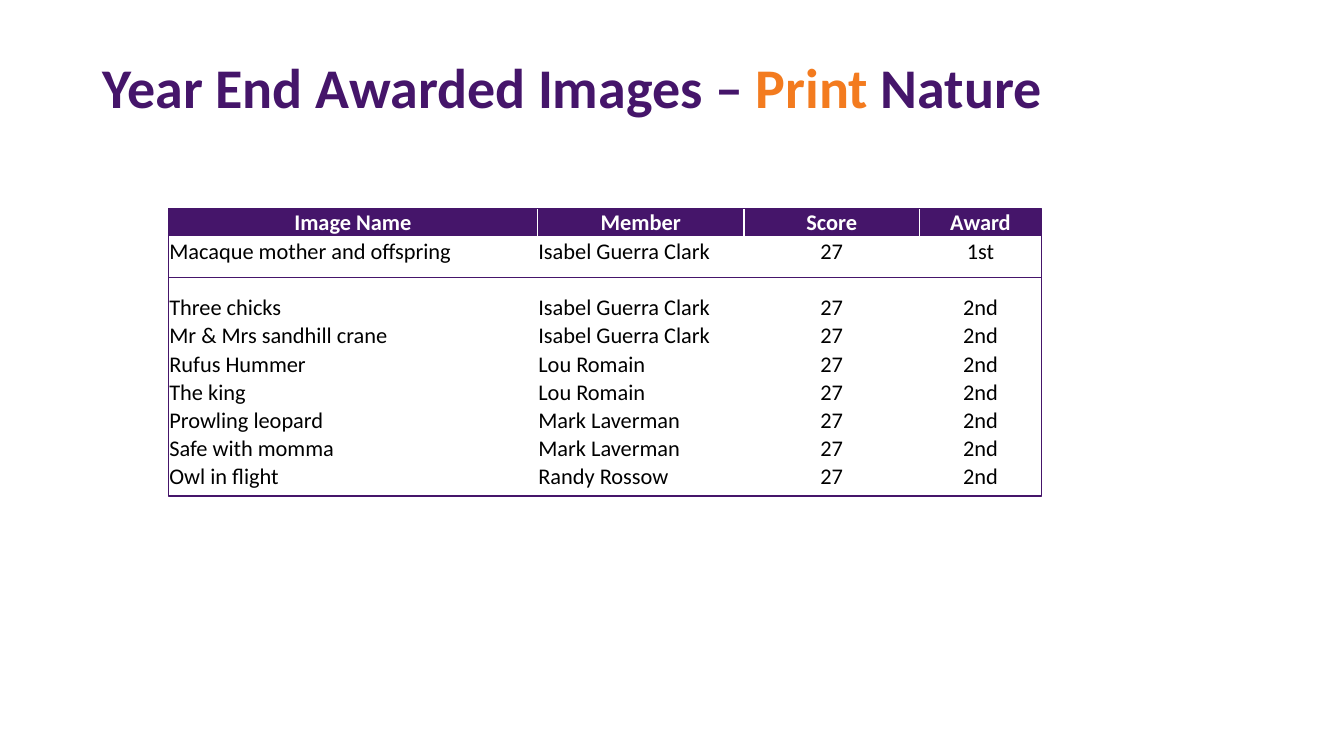
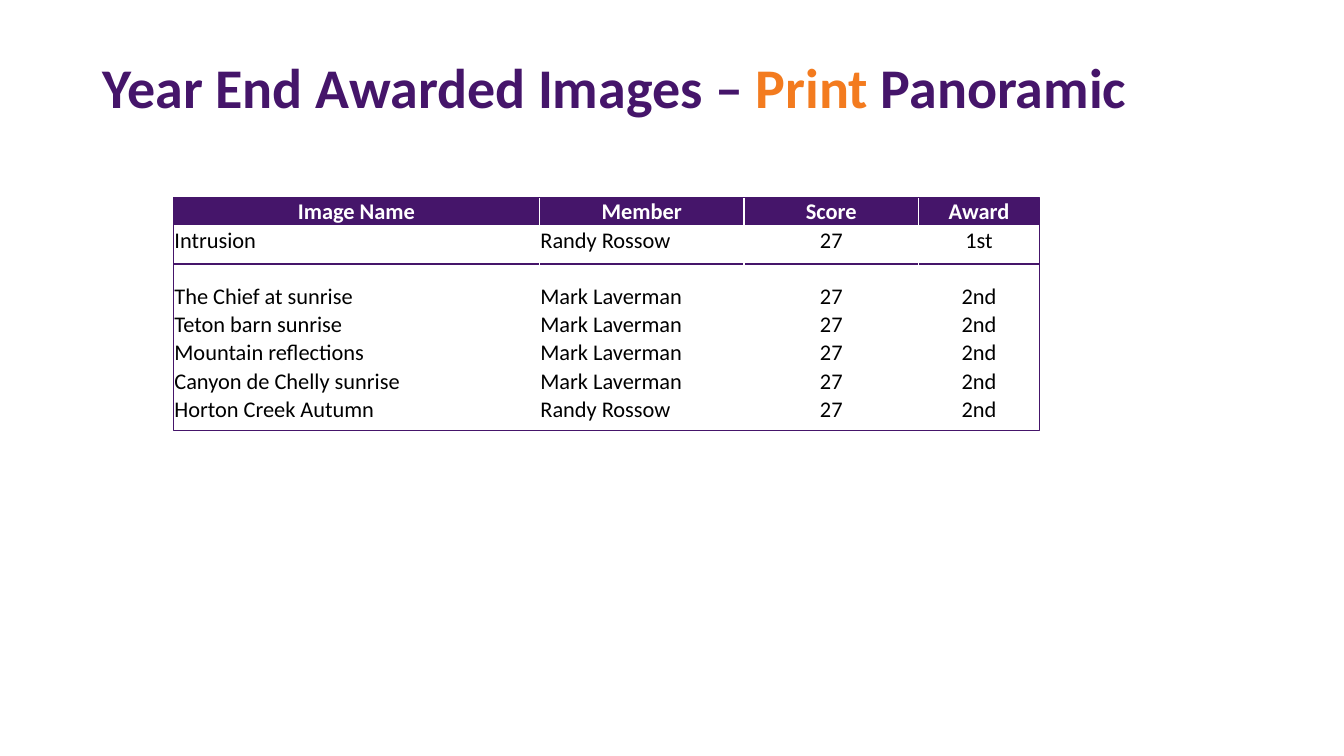
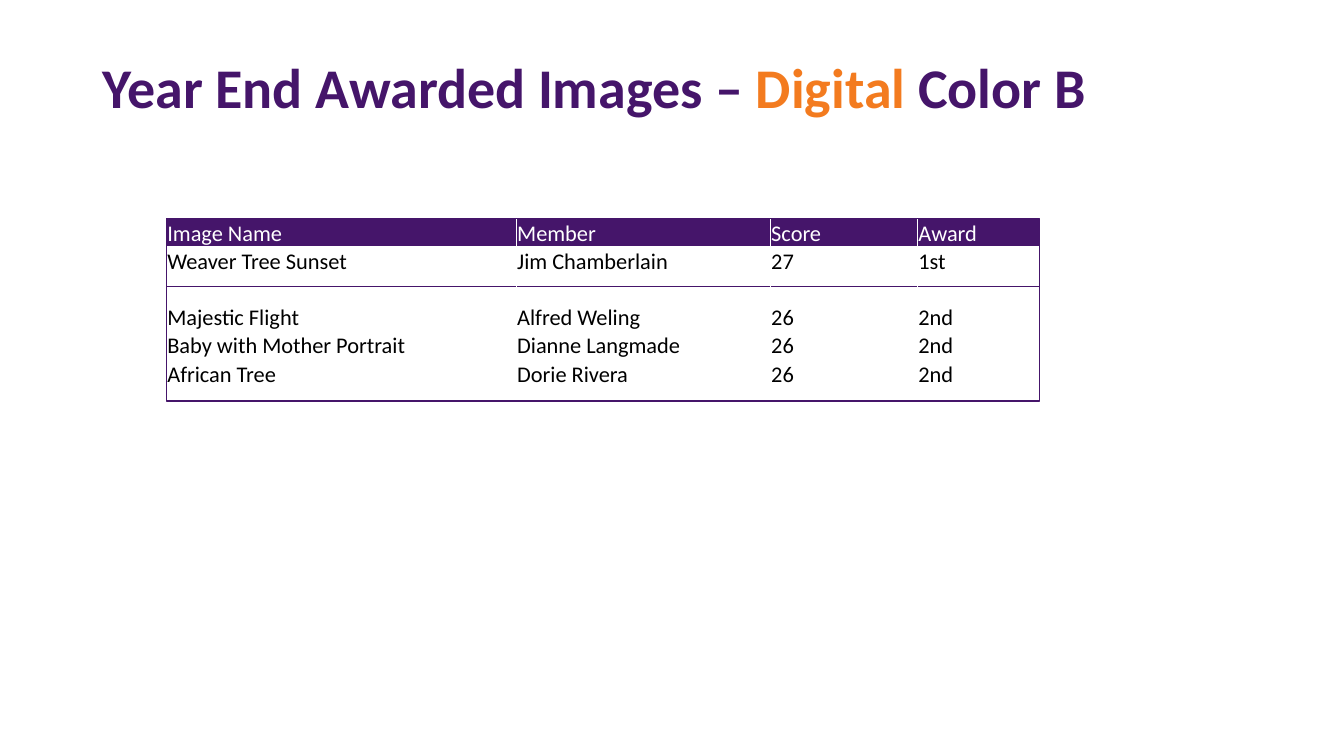
"""Build three slides that list the year-end awarded images."""
from lxml.etree import SubElement
from pptx import Presentation
from pptx.dml.color import RGBColor
from pptx.enum.shapes import MSO_CONNECTOR as Connector, MSO_SHAPE as Shape
from pptx.enum.text import MSO_ANCHOR as Anchor, PP_ALIGN as Align
from pptx.oxml.ns import qn
from pptx.util import Inches, Pt

COLORS = {"purple": "45156A", "orange": "F37B1F", "white": "FFFFFF", "black": "000000"}
HEADERS = ("Image Name", "Member", "Score", "Award")
ROW_HEIGHT = 0.28
TEXT_SIZE = 16

AWARDS = [
    {
        "medium": "Print", "category": "Nature",
        "left": 1.67, "top": 2.07, "frame_height": 2.85, "divider": 2.75,
        "columns": (3.66, 2.05, 1.74, 1.21), "centered": True, "divider_on_top": True,
        "first": ("Macaque mother and offspring", "Isabel Guerra Clark", "27", "1st"),
        "second_score": "27",
        "seconds": [
            ("Three chicks", "Isabel Guerra Clark"),
            ("Mr & Mrs sandhill crane", "Isabel Guerra Clark"),
            ("Rufus Hummer", "Lou Romain"),
            ("The king", "Lou Romain"),
            ("Prowling leopard", "Mark Laverman"),
            ("Safe with momma", "Mark Laverman"),
            ("Owl in flight", "Randy Rossow"),
        ],
    },
    {
        "medium": "Print", "category": "Panoramic",
        "left": 1.72, "top": 1.96, "frame_height": 2.31, "divider": 2.62,
        "columns": (3.63, 2.03, 1.73, 1.2), "centered": True, "divider_on_top": False,
        "first": ("Intrusion", "Randy Rossow", "27", "1st"),
        "second_score": "27",
        "seconds": [
            ("The Chief at sunrise", "Mark Laverman"),
            ("Teton barn sunrise", "Mark Laverman"),
            ("Mountain reflections", "Mark Laverman"),
            ("Canyon de Chelly sunrise", "Mark Laverman"),
            ("Horton Creek Autumn", "Randy Rossow"),
        ],
    },
    {
        "medium": "Digital", "category": "Color B",
        "left": 1.65, "top": 2.17, "frame_height": 1.81, "divider": 2.84,
        "columns": (3.47, 2.52, 1.46, 1.21), "centered": False, "divider_on_top": False,
        "first": ("Weaver Tree Sunset", "Jim Chamberlain", "27", "1st"),
        "second_score": "26",
        "seconds": [
            ("Majestic Flight", "Alfred Weling"),
            ("Baby with Mother Portrait", "Dianne Langmade"),
            ("African Tree", "Dorie Rivera"),
        ],
    },
]


def write(paragraph, text, size=TEXT_SIZE, color="black", bold=False, align=Align.LEFT):
    paragraph.alignment = align
    run = paragraph.add_run()
    run.text = text
    run.font.name = "Calibri"
    run.font.size = Pt(size)
    run.font.bold = bold
    run.font.color.rgb = RGBColor.from_string(COLORS[color])


def format_cell(cell, fill):
    cell.vertical_anchor = Anchor.BOTTOM
    cell.margin_left = cell.margin_right = cell.margin_top = Inches(0.01)
    cell.margin_bottom = 0
    properties = cell._tc.get_or_add_tcPr()
    for side in ("a:lnL", "a:lnR", "a:lnT", "a:lnB"):
        border = SubElement(properties, qn(side), w=str(Pt(1)))
        solid = SubElement(border, qn("a:solidFill"))
        SubElement(solid, qn("a:srgbClr"), val=COLORS["white"])
    if fill:
        cell.fill.solid()
        cell.fill.fore_color.rgb = RGBColor.from_string(COLORS[fill])
    else:
        cell.fill.background()


presentation = Presentation()
presentation.slide_width = Inches(13.33)
presentation.slide_height = Inches(7.5)

for award in AWARDS:
    slide = presentation.slides.add_slide(presentation.slide_layouts[6])
    left, top = Inches(award["left"]), Inches(award["top"])
    width = Inches(sum(award["columns"]))

    title = slide.shapes.add_textbox(Inches(0.92), Inches(0.4), Inches(11.5), Inches(0.99))
    title.text_frame.word_wrap = True
    title.text_frame.vertical_anchor = Anchor.MIDDLE
    heading = title.text_frame.paragraphs[0]
    heading.line_spacing = 0.9
    for text, color in (
        ("Year End Awarded Images – ", "purple"),
        (award["medium"], "orange"),
        (" " + award["category"], "purple"),
    ):
        write(heading, text, size=40, color=color, bold=True)

    divider_y = Inches(award["divider"])
    divider = slide.shapes.add_connector(
        Connector.STRAIGHT, left, divider_y, left + width, divider_y)
    divider.line.color.rgb = RGBColor.from_string(COLORS["purple"])
    divider.line.width = Pt(1)
    SubElement(divider._element.spPr, qn("a:effectLst"))

    seconds = [(*entry, award["second_score"], "2nd") for entry in award["seconds"]]
    rows = [HEADERS, award["first"], ("",) * len(HEADERS), *seconds]
    table_frame = slide.shapes.add_table(
        len(rows), len(HEADERS), left, top, width, Inches(ROW_HEIGHT * len(rows)))
    table = table_frame.table
    table.first_row = table.horz_banding = False
    for column, column_width in zip(table.columns, award["columns"]):
        column.width = Inches(column_width)
    for row_index, row in enumerate(rows):
        is_header = row_index == 0
        table.rows[row_index].height = Inches(ROW_HEIGHT)
        for column_index, text in enumerate(row):
            cell = table.cell(row_index, column_index)
            format_cell(cell, "purple" if is_header else None)
            paragraph = cell.text_frame.paragraphs[0]
            if not text:
                SubElement(paragraph._p, qn("a:endParaRPr"), sz=str(TEXT_SIZE * 100))
                continue
            centered = award["centered"] and (is_header or column_index >= 2)
            write(paragraph, text,
                  color="white" if is_header else "black",
                  bold=is_header and award["centered"],
                  align=Align.CENTER if centered else Align.LEFT)

    frame = slide.shapes.add_shape(
        Shape.RECTANGLE, left, top, width, Inches(award["frame_height"]))
    frame.shadow.inherit = False
    frame.fill.background()
    frame.line.color.rgb = RGBColor.from_string(COLORS["purple"])
    frame.line.width = Pt(1)

    if award["divider_on_top"]:
        slide.shapes._spTree.append(divider._element)

presentation.save("out.pptx")
